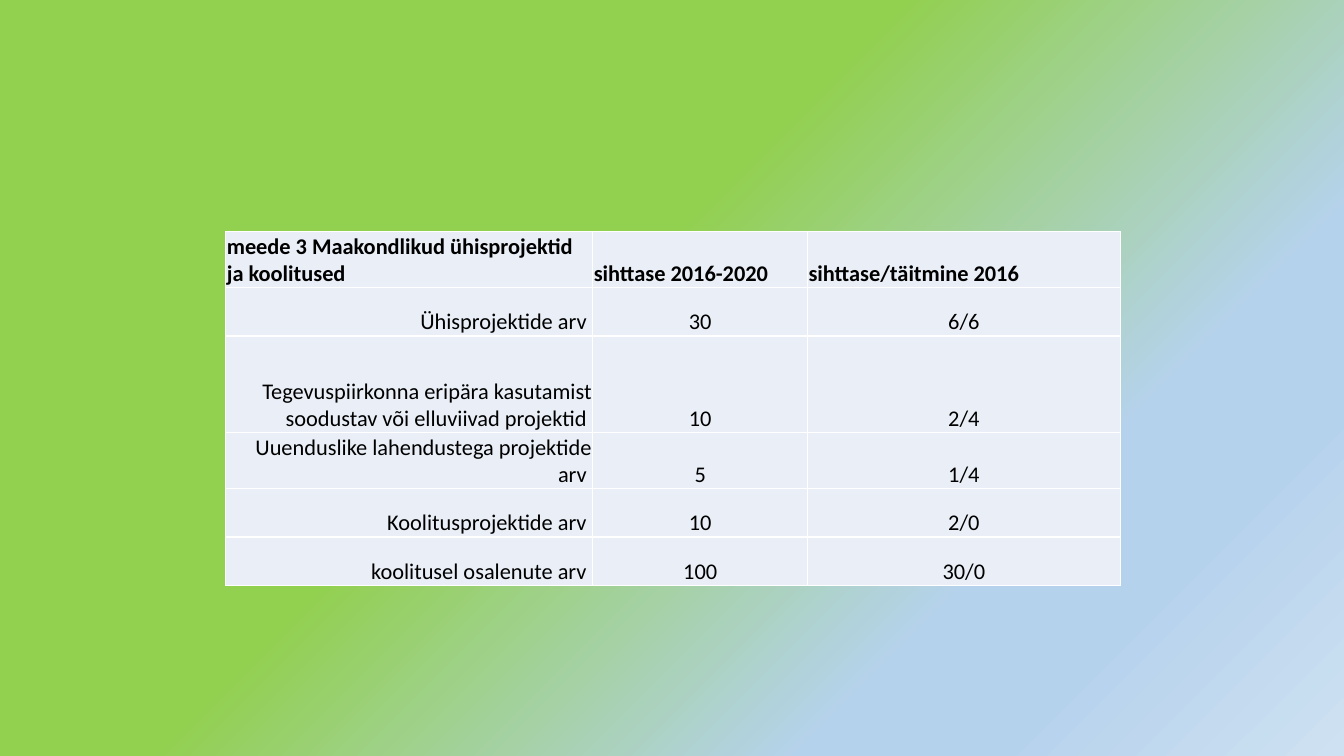
from dataclasses import dataclass

from lxml import etree
from pptx import Presentation
from pptx.dml.color import RGBColor
from pptx.enum.text import MSO_ANCHOR, PP_ALIGN
from pptx.oxml.ns import qn
from pptx.util import Inches, Pt

LEFT, CENTER, RIGHT = PP_ALIGN.LEFT, PP_ALIGN.CENTER, PP_ALIGN.RIGHT
BOTTOM = MSO_ANCHOR.BOTTOM


@dataclass(frozen=True)
class Theme:
    font: str = "Calibri"
    size: int = 16
    text: str = "000000"
    cell: str = "EAEFF7"
    border: str = "FFFFFF"
    border_width: int = 1
    backdrop: tuple = ((43, "92D050"), (74, "B5D2EC"), (83, "B5D2EC"), (100, "CEE1F2"))


THEME = Theme()
TABLE_BOX = (2.24, 2.3, 8.86, 3.48)
COLUMN_WIDTHS = (3.64, 2.13, 3.1)
ROW_HEIGHTS = (0.48, 0.48, 0.96, 0.48, 0.48, 0.48)
MEASURES = (
    ("meede 3 Maakondlikud ühisprojektid ja koolitused", "sihttase 2016-2020", "sihttase/täitmine 2016"),
    ("Ühisprojektide arv ", "30", "6/6"),
    ("Tegevuspiirkonna eripära kasutamist soodustav või elluviivad projektid ", "10", "2/4"),
    ("Uuenduslike lahendustega projektide arv ", "5", "1/4"),
    ("Koolitusprojektide arv ", "10", "2/0"),
    ("koolitusel osalenute arv ", "100", "30/0"),
)


def set_attributes(target, values):
    for name, value in values.items():
        setattr(target, name, value)


def add_color(parent, color):
    etree.SubElement(parent, qn("a:srgbClr"), val=color)


def paint_backdrop(page):
    """Fill the page with a gradient that spreads from its top left corner."""
    page.background.fill.gradient()
    gradient = page.element.xpath(".//p:bgPr/a:gradFill")[0]
    for child in list(gradient):
        gradient.remove(child)
    stops = etree.SubElement(gradient, qn("a:gsLst"))
    for percent, color in THEME.backdrop:
        add_color(etree.SubElement(stops, qn("a:gs"), pos=str(percent * 1000)), color)
    spread = etree.SubElement(gradient, qn("a:path"), {"path": "circle"})
    etree.SubElement(spread, qn("a:fillToRect"), r="100000", b="100000")


def add_borders(cell):
    properties = cell._tc.get_or_add_tcPr()
    for index, side in enumerate(("lnL", "lnR", "lnT", "lnB")):
        line = etree.Element(qn(f"a:{side}"), w=str(Pt(THEME.border_width)))
        add_color(etree.SubElement(line, qn("a:solidFill")), THEME.border)
        properties.insert(index, line)


def format_cell(cell, text, align, bold):
    set_attributes(cell, {
        "text": text,
        "vertical_anchor": BOTTOM,
        "margin_left": Inches(0.01),
        "margin_right": Inches(0.01),
        "margin_top": Inches(0.01),
        "margin_bottom": 0,
    })
    cell.fill.solid()
    cell.fill.fore_color.rgb = RGBColor.from_string(THEME.cell)
    add_borders(cell)
    para = cell.text_frame.paragraphs[0]
    para.alignment = align
    font = para.runs[0].font
    set_attributes(font, {"name": THEME.font, "size": Pt(THEME.size), "bold": bold})
    font.color.rgb = RGBColor.from_string(THEME.text)


def add_measure_table(page, box):
    frame = page.shapes.add_table(len(MEASURES), len(COLUMN_WIDTHS), *map(Inches, box))
    table = frame.table
    table.horz_banding = False
    for column, width in zip(table.columns, COLUMN_WIDTHS):
        column.width = Inches(width)
    for row, height in zip(table.rows, ROW_HEIGHTS):
        row.height = Inches(height)
    for row_index, texts in enumerate(MEASURES):
        is_header = row_index == 0
        aligns = (LEFT,) * 3 if is_header else (RIGHT, CENTER, CENTER)
        for column_index, (text, align) in enumerate(zip(texts, aligns)):
            format_cell(table.cell(row_index, column_index), text, align, is_header)


def main():
    deck = Presentation()
    set_attributes(deck, {"slide_width": Inches(13.33), "slide_height": Inches(7.5)})
    page = deck.slides.add_slide(deck.slide_layouts[6])
    paint_backdrop(page)
    add_measure_table(page, TABLE_BOX)
    deck.save("out.pptx")


if __name__ == "__main__":
    main()
